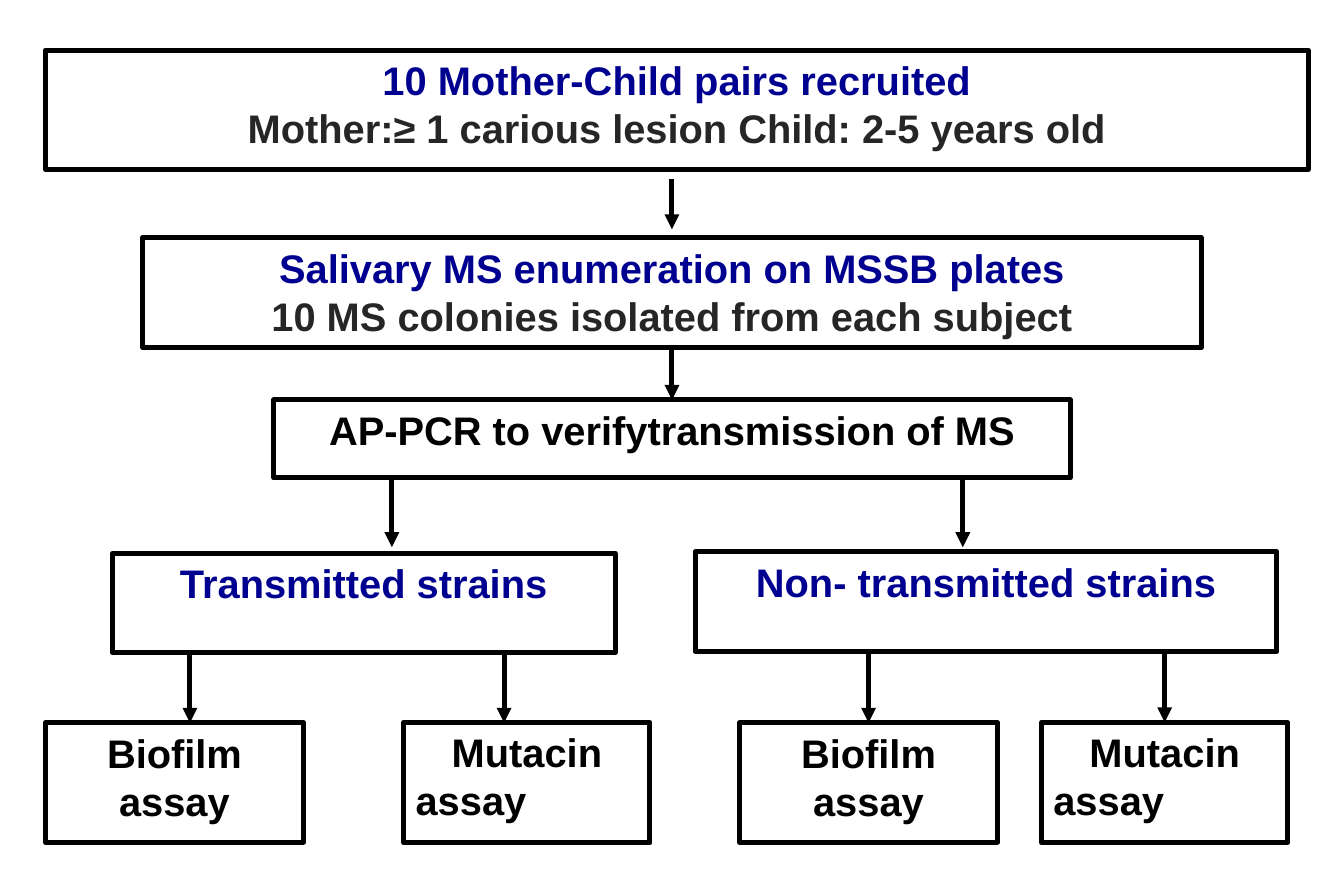
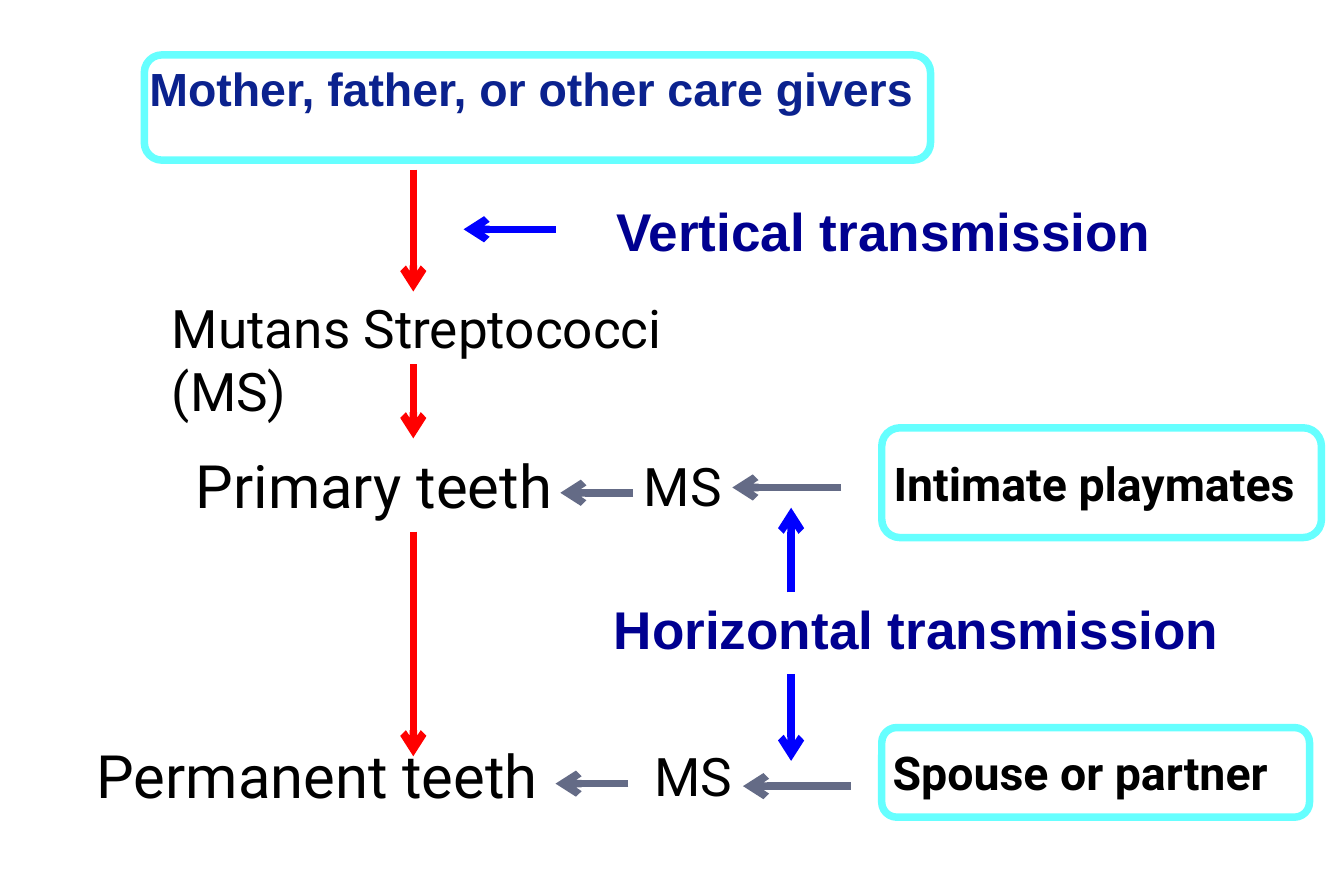
from lxml import etree
from pptx import Presentation
from pptx import util as u
from pptx.dml.color import RGBColor
from pptx.enum import shapes, text
from pptx.oxml.ns import qn

COLORS = {
    "white": "FFFFFF", "black": "000000", "navy": "000090", "charcoal": "262626",
    "royal": "0B228E", "cyan": "66FFFF", "red": "FF0000", "blue": "0000FF",
    "slate": "646B86",
}
TOP, BOTTOM = 0, 2


def rgb(name):
    return RGBColor.from_string(COLORS[name])


class Deck:
    def __init__(self, width, height):
        self.prs = Presentation()
        self.prs.slide_width, self.prs.slide_height = u.Pt(width), u.Pt(height)
        self.s = None

    def slide(self):
        self.s = self.prs.slides.add_slide(self.prs.slide_layouts[6])

    def fill_text(self, tf, lines, size, font, bold, align=text.PP_ALIGN.LEFT,
                  anchor=text.MSO_ANCHOR.TOP):
        tf.word_wrap = True
        tf.vertical_anchor = anchor
        for i, (line, color, *own_align) in enumerate(lines):
            p = tf.paragraphs[0] if i == 0 else tf.add_paragraph()
            p.text = line
            p.alignment = own_align[0] if own_align else align
            p.font.size, p.font.name, p.font.bold = u.Pt(size), font, bold
            p.font.color.rgb = rgb(color)

    def shape(self, kind, at, line, width):
        sp = self.s.shapes.add_shape(kind, *map(u.Pt, at))
        sp.shadow.inherit = False
        sp.fill.solid()
        sp.fill.fore_color.rgb = rgb("white")
        sp.line.color.rgb = rgb(line)
        sp.line.width = u.Pt(width)
        return sp

    def step(self, at, *lines):
        sp = self.shape(shapes.MSO_SHAPE.RECTANGLE, at, "black", 3)
        self.fill_text(sp.text_frame, lines, 24, "Arial", True, text.PP_ALIGN.CENTER)
        return sp

    def source(self, at, label, color, font, inset, anchor):
        sp = self.shape(shapes.MSO_SHAPE.ROUNDED_RECTANGLE, at, "cyan", 4.5)
        tf = sp.text_frame
        tf.margin_left, tf.margin_right = u.Pt(inset), u.Pt(0)
        tf.margin_top = tf.margin_bottom = u.Pt(0)
        self.fill_text(tf, [(label, color)], 28, font, True, anchor=anchor)

    def label(self, at, line, size, color="black", font="Roboto", bold=False):
        sp = self.s.shapes.add_textbox(*map(u.Pt, at))
        self.fill_text(sp.text_frame, [(line, color)], size, font, bold)

    def arrow(self, x1, y1, x2, y2, color="black", width=3, head="triangle",
              begin=None, end=None):
        c = self.s.shapes.add_connector(
            shapes.MSO_CONNECTOR.STRAIGHT, *map(u.Pt, (x1, y1, x2, y2)))
        if begin is not None:
            c.begin_connect(begin, BOTTOM)
        if end is not None:
            c.end_connect(end, TOP)
        c.line.color.rgb = rgb(color)
        c.line.width = u.Pt(width)
        sp_pr = c._element.spPr
        etree.SubElement(sp_pr.find(qn("a:ln")), qn("a:tailEnd"), type=head)
        etree.SubElement(sp_pr, qn("a:effectLst"))

    def flow(self, color, *ends):
        for points in ends:
            self.arrow(*points, color=color, width=4.5, head="arrow")


def study_design(d):
    d.slide()
    d.step((27.4, 30.2, 761, 72), ("10 Mother-Child pairs recruited", "navy"),
           ("Mother:≥ 1 carious lesion Child: 2-5 years old", "charcoal"))
    plates = d.step((86, 143.3, 638, 66.2),
                    ("Salivary MS enumeration on MSSB plates", "navy"),
                    ("10 MS colonies isolated from each subject", "charcoal"))
    pcr = d.step((165, 241, 480, 47), ("AP-PCR to verifytransmission of MS", "black"))
    d.step((67.7, 333.4, 303, 60), ("Transmitted strains", "navy"))
    d.step((419, 332.6, 350.6, 60), ("Non- transmitted strains", "navy"))

    biofilm = [d.step((x, 435.6, 155.5, 72), ("Biofilm assay", "black"))
               for x in (27.4, 445.7)]
    mutacin = [d.step((x, 435.3, 148.3, 72.7), ("Mutacin", "black"),
                      ("assay", "black", text.PP_ALIGN.LEFT))
               for x in (243.4, 627.8)]

    d.arrow(405, 108, 405, 138.2)
    d.arrow(405, 209.5, 405, 241, begin=plates, end=pcr)
    for x in (236.2, 580.3):
        d.arrow(x, 288, x, 329.8)
    for x, assay in ((114.5, None), (303.8, None),
                     (523.45, biofilm[1]), (701.95, mutacin[1])):
        d.arrow(x, 393.4, x, 435.6, end=assay)


def transmission_routes(d):
    d.slide()
    d.source((87, 33.1, 473.8, 63.4), "Mother, father, or other care givers",
             "royal", "Arial", 0, text.MSO_ANCHOR.TOP)
    for top, width, height, name in ((257.8, 265, 66.2, "Intimate playmates"),
                                     (438.5, 257.8, 54, "Spouse or partner")):
        d.source((531.4, top, width, height), name, "black", "Roboto", 4,
                 text.MSO_ANCHOR.MIDDLE)

    d.label((110.9, 267.1, 250, 51), "Primary teeth", 36)
    d.label((51.1, 441.4, 300, 51), "Permanent teeth", 36)
    d.label((96.5, 174.2, 350, 84), "Mutans Streptococci (MS)", 32)
    for x, y in ((380.9, 270), (387.4, 444.2)):
        d.label((x, y, 72, 46), "MS", 32)
    for x, y, route in ((364.3, 115.9, "Vertical transmission"),
                        (362.9, 355.7, "Horizontal transmission")):
        d.label((x, y, 390, 46), route, 32, "navy", "Arial", True)

    d.flow("red", *((249.1, y1, 249.1, y2) for y1, y2 in
                    ((102.2, 175.7), (219.6, 264.2), (320.4, 455.8))))
    d.flow("slate", *((x1, y, x2, y) for x1, x2, y in
                      ((506.9, 441.4, 293.8), (512.6, 447.8, 473.8),
                       (381.6, 337.7, 297), (378.7, 334.8, 472.3))))
    d.flow("blue", (334.8, 138.2, 279.4, 138.2),
           (476.8, 357.1, 476.8, 306), (476.8, 406.1, 476.8, 458.6))


def main():
    d = Deck(810, 540)
    study_design(d)
    transmission_routes(d)
    d.prs.save("out.pptx")


if __name__ == "__main__":
    main()
